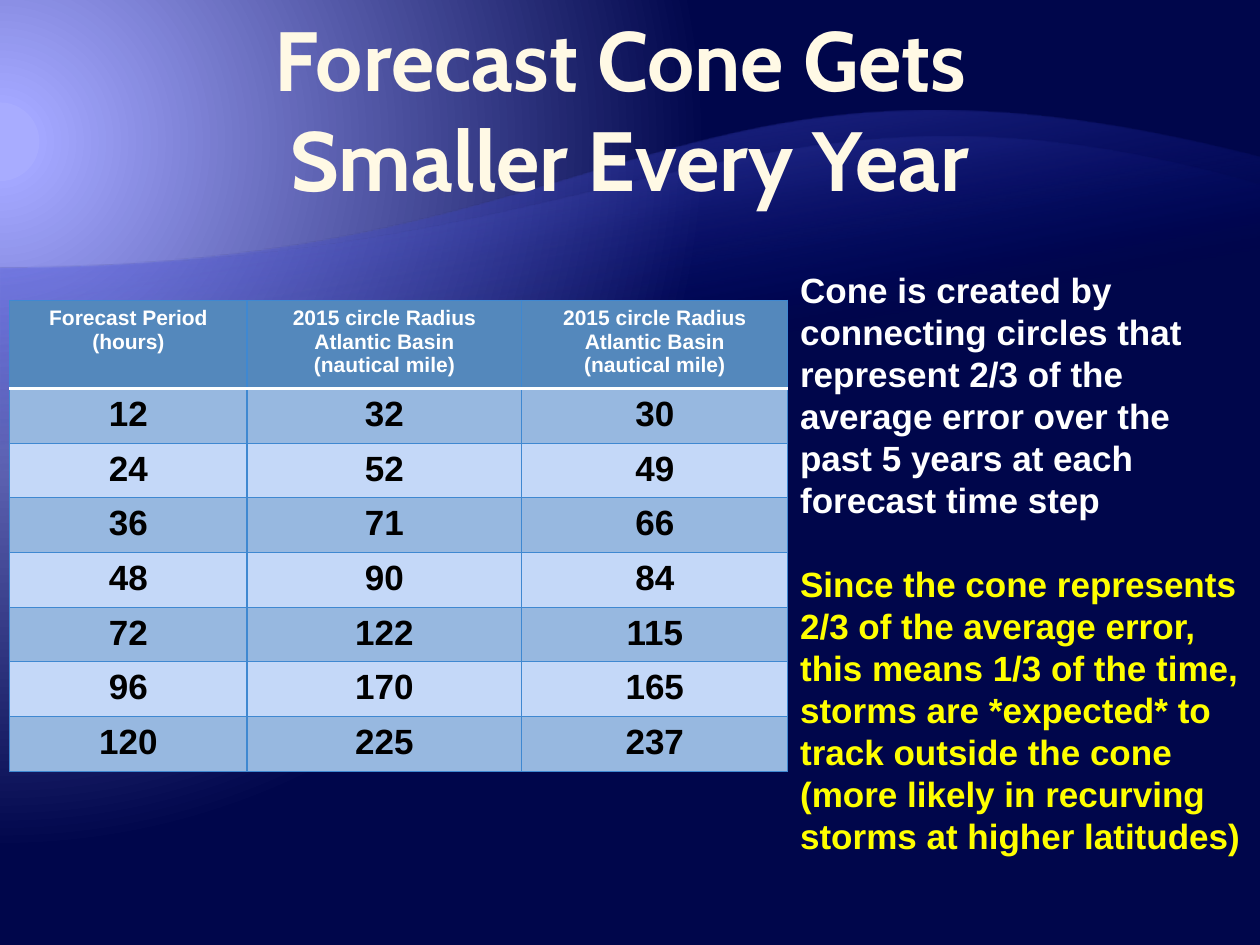
from lxml import etree
from pptx import Presentation
from pptx import util as u
from pptx.dml.color import RGBColor
from pptx.enum import text
from pptx.oxml import parse_xml

NS = "http://schemas.openxmlformats.org/drawingml/2006/main"
WIDE, HIGH = 25.4, 19.05
MID = text.PP_ALIGN.CENTER
ROWS = [
    ("Forecast Period (hours)",
     "2015 circle Radius Atlantic Basin\n(nautical mile)",
     "2015 circle Radius Atlantic Basin\n(nautical mile)"),
    ("12", "32", "30"),
    ("24", "52", "49"),
    ("36", "71", "66"),
    ("48", "90", "84"),
    ("72", "122", "115"),
    ("96", "170", "165"),
    ("120", "225", "237"),
]
CONE = ("Cone is created by connecting circles that represent 2/3 of the "
        "average error over the past 5 years at each forecast time step")
RISK = ("Since the cone represents 2/3 of the average error, this means 1/3 "
        "of the time, storms are *expected* to track outside the cone "
        "(more likely in recurving storms at higher latitudes)")


def color(code):
    return RGBColor.from_string(code)


def style(para, size, code, face="Arial", **form):
    for key, val in form.items():
        setattr(para, key, val)
    font = {"size": u.Pt(size), "name": face, "bold": True}
    for key, val in font.items():
        setattr(para.font, key, val)
    para.font.color.rgb = color(code)


def blend(fill, stops, shade):
    fill.solid()
    marks = "".join(
        f'<a:gs pos="{pos * 1000}"><a:srgbClr val="{code}">'
        f'<a:alpha val="{alpha * 1000}"/></a:srgbClr></a:gs>'
        for pos, code, alpha in stops)
    return parse_xml(f'<a:gradFill xmlns:a="{NS}" rotWithShape="1">'
                     f'<a:gsLst>{marks}</a:gsLst>{shade}</a:gradFill>')


def swap(root, new):
    old = root.find(f".//{{{NS}}}solidFill")
    old.getparent().replace(old, new)


def backdrop(slide):
    stops = [(5, "A8ACFF", 100), (5, "A3A7FF", 100), (90, "00064B", 100)]
    shade = ('<a:path path="circle"><a:fillToRect l="20000" t="30000" '
             'r="135000" b="100000"/></a:path>')
    swap(slide.element, blend(slide.background.fill, stops, shade))


def bend(ends, step):
    t = step / 60
    mix = ((1 - t) ** 3, 3 * t * (1 - t) ** 2, 3 * t * t * (1 - t), t ** 3)
    return tuple(u.Cm(sum(m * p[i] for m, p in zip(mix, ends)))
                 for i in (0, 1))


def wave(slide, ends, base, code, alpha):
    crest = [bend(ends, n) for n in range(61)]
    build = slide.shapes.build_freeform(*crest[0])
    foot = [(u.Cm(WIDE), u.Cm(base)), (0, u.Cm(base))]
    build.add_line_segments(crest[1:] + foot, close=True)
    shape = build.convert_to_shape()
    shape.shadow.inherit = False
    shape.line.fill.background()
    stops = [(65, "000D9E", 0), (100, code, alpha)]
    shade = f'<a:lin ang="{260 * 60000}" scaled="0"/>'
    swap(shape.element, blend(shape.fill, stops, shade))


def box(slide, *area):
    frame = slide.shapes.add_textbox(*map(u.Cm, area)).text_frame
    frame.word_wrap = True
    return frame


def title(slide):
    frame = box(slide, 1.27, 2, 22.86, 2.24)
    form = {"margin_left": 0, "margin_right": 0, "margin_top": u.Cm(0.03),
            "margin_bottom": u.Cm(0.03),
            "vertical_anchor": text.MSO_ANCHOR.BOTTOM}
    for key, val in form.items():
        setattr(frame, key, val)
    para = frame.paragraphs[0]
    para.text = "Forecast Cone Gets \vSmaller Every Year"
    style(para, 48, "FFF9E5", "Cabin", alignment=MID)


def border(cell, edges):
    props = cell._tc.get_or_add_tcPr()
    for spot, (side, (code, width)) in enumerate(edges.items()):
        line = etree.Element(f"{{{NS}}}ln{side}", w=str(u.Pt(width)))
        fill = etree.SubElement(line, f"{{{NS}}}solidFill")
        etree.SubElement(fill, f"{{{NS}}}srgbClr", val=code)
        props.insert(spot, line)


def paint(cell, words, row):
    cell.text = words
    cell.fill.solid()
    fill = "97B8E0" if row % 2 else "C4D8F8"
    cell.fill.fore_color.rgb = color(fill if row else "5488BC")
    for para in cell.text_frame.paragraphs:
        style(para, 20 if row else 12, "000000" if row else "FFFFFF",
              alignment=MID)
    edges = dict.fromkeys("LRTB", ("3F88D1", 0.75))
    if row < 2:
        edges["T" if row else "B"] = ("FFFFFF", 2)
    border(cell, edges)


def grid(slide):
    wide = (4.78, 5.54, 5.36)
    area = map(u.Cm, (0.2, 6.05, sum(wide), 9.48))
    table = slide.shapes.add_table(len(ROWS), len(wide), *area).table
    for col, size in zip(table.columns, wide):
        col.width = u.Cm(size)
    for row, line in enumerate(ROWS):
        table.rows[row].height = u.Cm(1.1 if row else 1.78)
        for col, words in enumerate(line):
            paint(table.cell(row, col), words, row)


def notes(slide):
    frame = box(slide, 15.88, 5.28, 9.52, 12.22)
    frame.text = f"{CONE}\n{RISK}"
    first, last = frame.paragraphs
    style(first, 20, "FFFFFF")
    style(last, 20, "FFFF00", space_before=u.Pt(24))


def main():
    deck = Presentation()
    deck.slide_width, deck.slide_height = u.Cm(WIDE), u.Cm(HIGH)
    slide = deck.slides.add_slide(deck.slide_layouts[6])
    backdrop(slide)
    wave(slide, [(0, 5.41), (12.7, 5.41), (13.56, 0.13), (WIDE, 3.18)],
         18.62, "797FFF", 55)
    wave(slide, [(0, 5.41), (12.7, 5.41), (15.19, 0.79), (WIDE, 3.73)],
         16.18, "A3A7FF", 30)
    title(slide)
    grid(slide)
    notes(slide)
    deck.save("out.pptx")


if __name__ == "__main__":
    main()
